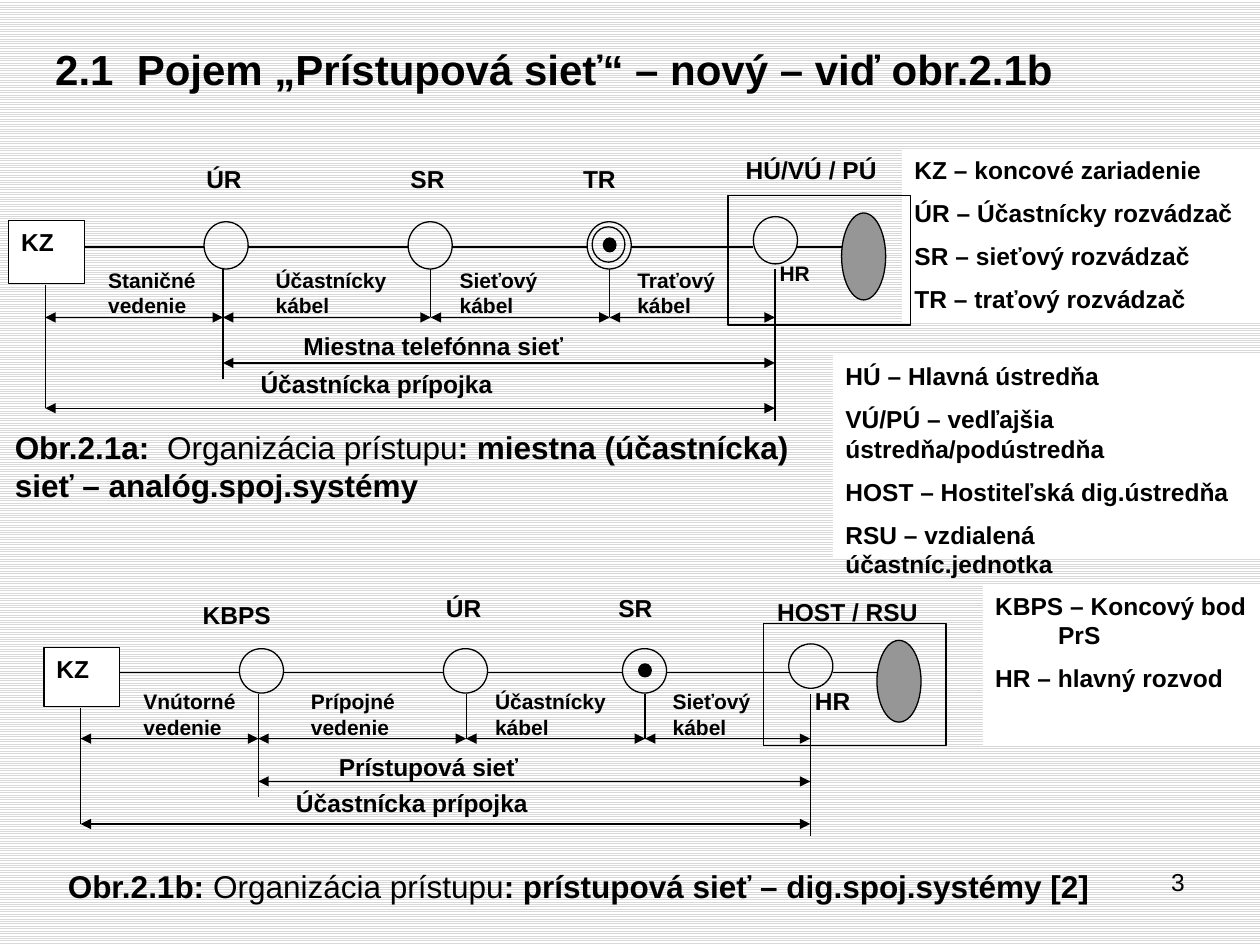
from dataclasses import dataclass

from lxml import etree
from pptx import Presentation
from pptx import util as u
from pptx.dml.color import RGBColor
from pptx.enum import dml, shapes, text
from pptx.oxml.ns import qn

BLACK = RGBColor(0, 0, 0)
WHITE = RGBColor(255, 255, 255)
GRAY = RGBColor(0x96, 0x96, 0x96)
STRIPE = RGBColor(0xD9, 0xD9, 0xD9)

RECTANGLE = shapes.MSO_SHAPE.RECTANGLE
OVAL = shapes.MSO_SHAPE.OVAL

KZ_WIDTH, NODE_WIDTH, NODE_HEIGHT = 43.2, 25.2, 27
NODES = [(111.6, 0.7), (228.2, 0.7), (330.5, 0.7), (425.5, -2.2)]
EXCHANGE_LEFT = 475.9
DROPS = [
    (20.9, 36.7, 107.3),
    (122.4, 28, 90.7),
    (241.2, 28, 55.4),
    (343.4, 28, 55.4),
    (437.8, 28, 114.5),
]
CABLE_LEFTS = [49.7, 145.4, 250.6, 352.1]


def write_text(shape, paragraphs, size=14, bold=True, align=text.PP_ALIGN.LEFT, gap=7.7):
    frame = shape.text_frame
    frame.word_wrap = True
    frame.vertical_anchor = text.MSO_ANCHOR.TOP
    for index, content in enumerate(paragraphs):
        paragraph = frame.add_paragraph() if index else frame.paragraphs[0]
        paragraph.alignment = align
        if index:
            paragraph.space_before = u.Pt(gap)
        parts = [(content, bold)] if isinstance(content, str) else content
        for words, is_bold in parts:
            run = paragraph.add_run()
            run.text = words
            run.font.name = "Arial"
            run.font.size = u.Pt(size)
            run.font.bold = is_bold
            run.font.color.rgb = BLACK


@dataclass
class Figure:
    left: float
    top: float
    scale: float
    node_labels: list
    cables: list
    cable_top: float
    network: str
    hr_size: int
    ringed: bool


class Board:
    line_width = 0.75

    def __init__(self, slide):
        self.slide = slide
        self.place()

    def place(self, left=0, top=0, scale=1, grouped=False):
        self.left, self.top, self.scale = left, top, scale
        shape_tree = self.slide.shapes
        self.shapes = shape_tree.add_group_shape().shapes if grouped else shape_tree

    def x(self, value):
        return u.Pt(round(self.left + value, 2))

    def y(self, value):
        return u.Pt(round(self.top + value * self.scale, 2))

    def bounds(self, left, top, width, height):
        return self.x(left), self.y(top), u.Pt(width), u.Pt(round(height * self.scale, 2))

    def shape(self, kind, left, top, width, height, fill=None, outline=True):
        shape = self.shapes.add_shape(kind, *self.bounds(left, top, width, height))
        shape.shadow.inherit = False
        if fill is None:
            shape.fill.background()
        else:
            shape.fill.solid()
            shape.fill.fore_color.rgb = fill
        if outline:
            shape.line.color.rgb = BLACK
            shape.line.width = u.Pt(self.line_width)
        else:
            shape.line.fill.background()
        return shape

    def label(self, paragraphs, left, top, width, height=36, **style):
        box = self.shapes.add_textbox(*self.bounds(left, top, width, height))
        write_text(box, paragraphs, **style)

    def panel(self, paragraphs, left, top, width, height):
        box = self.shape(RECTANGLE, left, top, width, height, WHITE, outline=False)
        write_text(box, paragraphs)

    def line(self, x1, y1, x2, y2, arrows=False):
        connector = self.shapes.add_connector(
            shapes.MSO_CONNECTOR.STRAIGHT, self.x(x1), self.y(y1), self.x(x2), self.y(y2)
        )
        connector.line.color.rgb = BLACK
        connector.line.width = u.Pt(self.line_width)
        properties = connector._element.spPr
        if arrows:
            outline = properties.find(qn("a:ln"))
            for end in ("a:headEnd", "a:tailEnd"):
                etree.SubElement(outline, qn(end), type="triangle")
        etree.SubElement(properties, qn("a:effectLst"))

    def figure(self, figure):
        self.place(figure.left, figure.top, figure.scale, grouped=True)
        write_text(self.shape(RECTANGLE, 0, 0, KZ_WIDTH, 36, WHITE), ["KZ"])
        for name, left, top, width in figure.node_labels:
            self.label([name], left, top, width)

        for left, top in NODES:
            self.shape(OVAL, left, top, NODE_WIDTH, NODE_HEIGHT)
        if figure.ringed:
            self.shape(OVAL, 333.4, 3.6, 18.7, 20.2)
        self.shape(OVAL, 339.8, 10, 7.2, 7.9, BLACK)
        self.shape(OVAL, EXCHANGE_LEFT, -4.3, NODE_WIDTH, 49.7, GRAY)
        self.shape(RECTANGLE, 411, -14.4, 104.4, 74.2)

        lefts = [left for left, _ in NODES]
        starts = [KZ_WIDTH] + [left + NODE_WIDTH for left in lefts]
        for start, end in zip(starts, lefts + [EXCHANGE_LEFT]):
            self.line(start, 15.1, end, 15.1)
        for x, top, bottom in DROPS:
            self.line(x, top, x, bottom)
        stops = [drop[0] for drop in DROPS]
        for start, end in zip(stops, stops[1:]):
            self.line(start, 55.4, end, 55.4, arrows=True)
        for start, y in ((stops[1], 81.4), (stops[0], 107.3)):
            self.line(start, y, stops[-1], y, arrows=True)

        for name, left in zip(figure.cables, CABLE_LEFTS):
            self.label([name], left, figure.cable_top, 79.9, 34, size=12)
        self.label([figure.network], 161.3, 59.8, 264, 34)
        self.label(["Účastnícka prípojka"], 136.8, 81.4, 275, 34)
        self.label(["HR"], 433.4, 19.4, 42.5, size=figure.hr_size)
        self.place()


OLD_NETWORK = Figure(
    left=5, top=126, scale=1,
    node_labels=[
        ("ÚR", 105.8, -36, 43.2),
        ("SR", 222.5, -36, 43.2),
        ("TR", 321.1, -36, 43.2),
        ("HÚ/VÚ / PÚ", 414, -41, 110),
    ],
    cables=["Staničné vedenie", "Účastnícky kábel", "Sieťový kábel", "Traťový kábel"],
    cable_top=23.4, network="Miestna telefónna sieť", hr_size=12, ringed=True,
)
NEW_NETWORK = Figure(
    left=25.2, top=370, scale=0.94,
    node_labels=[
        ("KBPS", 83.5, -32.9, 71.3),
        ("ÚR", 222.5, -36.8, 43.2),
        ("SR", 321.1, -36.8, 43.2),
        ("HOST / RSU", 411.8, -34.5, 110),
    ],
    cables=["Vnútorné vedenie", "Prípojné vedenie", "Účastnícky kábel", "Sieťový kábel"],
    cable_top=21.4, network="Prístupová sieť", hr_size=14, ringed=False,
)


def main():
    presentation = Presentation()
    presentation.slide_width, presentation.slide_height = u.Pt(720), u.Pt(540)
    slide = presentation.slides.add_slide(presentation.slide_layouts[6])
    background = slide.background.fill
    background.patterned()
    background.pattern = dml.MSO_PATTERN.LIGHT_HORIZONTAL
    background.fore_color.rgb = STRIPE
    background.back_color.rgb = WHITE

    board = Board(slide)
    board.label(["3"], 516, 492, 168, bold=False, align=text.PP_ALIGN.RIGHT)
    board.panel(["HÚ – Hlavná ústredňa", "VÚ/PÚ – vedľajšia ústredňa/podústredňa",
                 "HOST – Hostiteľská dig.ústredňa", "RSU – vzdialená účastníc.jednotka"],
                476, 203, 244, 116)
    board.panel(["KZ – koncové zariadenie", "ÚR – Účastnícky rozvádzač",
                 "SR – sieťový rozvádzač", "TR – traťový rozvádzač"],
                515.5, 85, 204.5, 99.4)
    board.panel(["KBPS – Koncový bod \tPrS", "HR – hlavný rozvod"], 561.6, 334, 158.4, 92)
    board.label(["2.1  Pojem „Prístupová sieť“ – nový – viď obr.2.1b"],
                24.5, 21.6, 657, size=24)
    board.figure(OLD_NETWORK)
    board.figure(NEW_NETWORK)
    board.label([[("Obr.2.1a:  ", True), ("Organizácia prístupu", False),
                  (": miestna (účastnícka) sieť – analóg.spoj.systémy", True)]],
                1.4, 241.2, 490, 50.4, size=18)
    board.label([[("Obr.2.1b: ", True), ("Organizácia prístupu", False),
                  (": prístupová sieť – dig.spoj.systémy [2]", True)]],
                31.7, 492, 620, 29, size=18)
    presentation.save("out.pptx")


if __name__ == "__main__":
    main()
